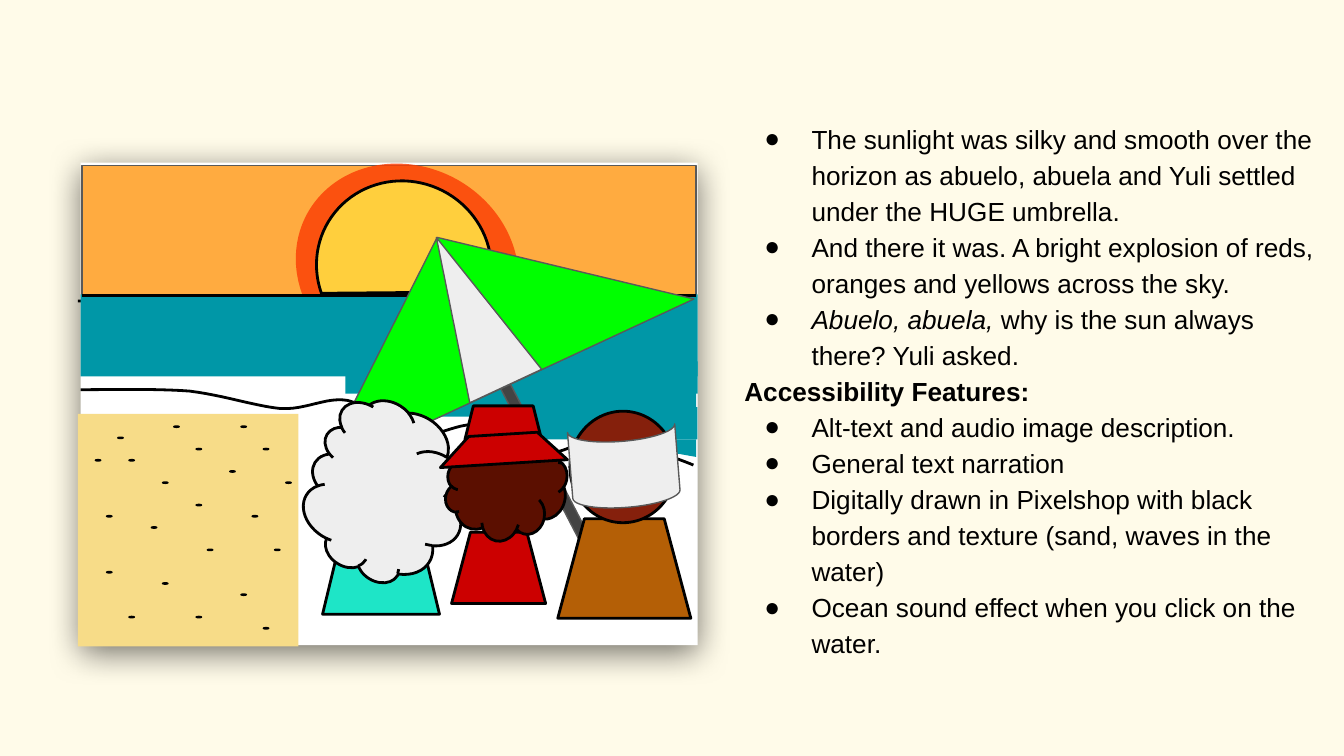
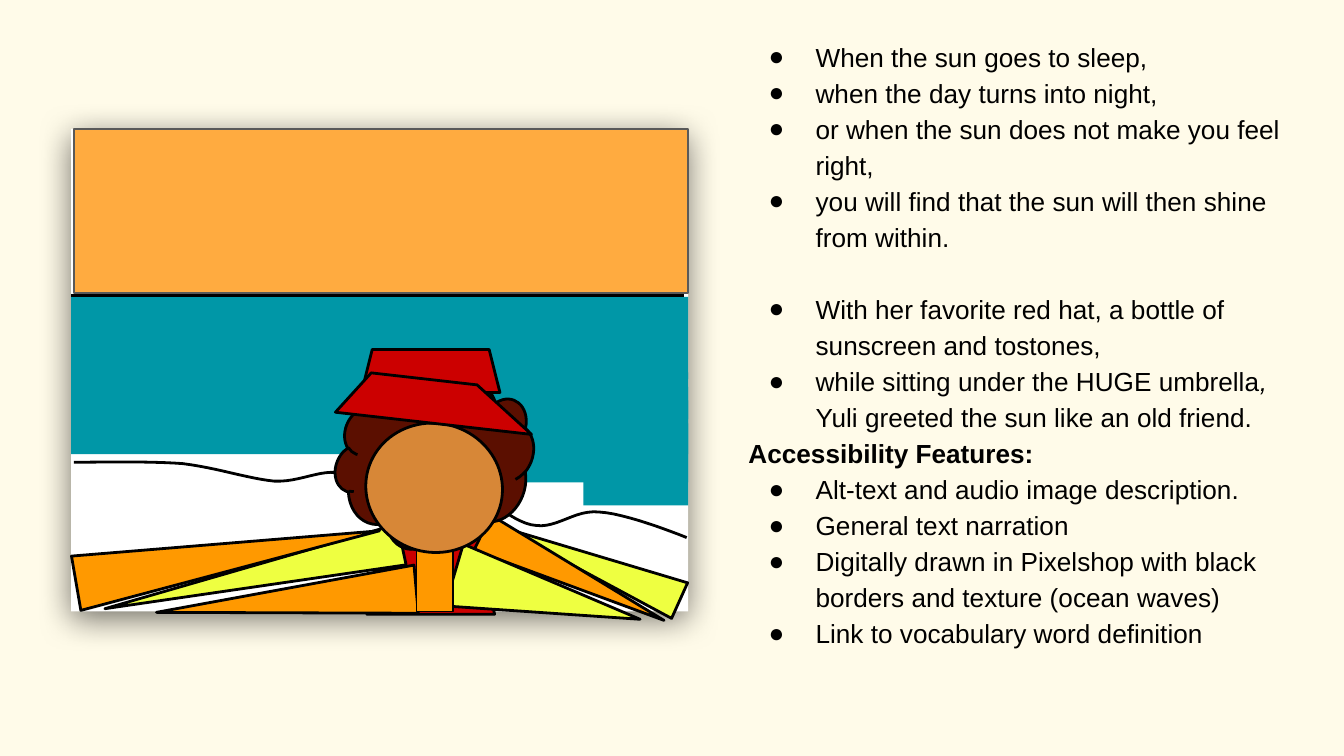
from dataclasses import dataclass

from lxml.etree import SubElement
from pptx import Presentation
from pptx.dml.color import RGBColor
from pptx.enum.shapes import MSO_CONNECTOR, MSO_SHAPE
from pptx.oxml.ns import qn
from pptx.util import Inches, Pt

# ---------- Shared style ----------
COLORS = {
    "paper": "FFFBE9", "white": "FFFFFF", "black": "000000", "gray": "595959",
    "sky": "FFAB40", "glow": "FB4006", "sun": "FFCF3D", "sea": "0097A7",
    "sand": "F7DC88", "pole": "434343", "red": "CC0000", "mint": "1EE5C7",
    "brown": "B45F06", "green": "00FF00", "pale": "EEEEEE", "dark skin": "85200C",
    "hair": "5B0F00", "skin": "D78737", "yellow": "EEFF41", "orange": "FF9900",
}
OPACITY = {"glow": 84}
OUTLINES = {"bold": ("black", 1.5), "fine": ("gray", 0.75), "grain": ("black", 0.75)}
FONT, FONT_SIZE, LINE_SPACING = "Arial", 14, 1.15
BLANK_LINE = 19.3

RECT = MSO_SHAPE.RECTANGLE
CARD = MSO_SHAPE.ROUNDED_RECTANGLE
CHORD = MSO_SHAPE.CHORD
TRIANGLE = MSO_SHAPE.ISOSCELES_TRIANGLE
CORNER = MSO_SHAPE.RIGHT_TRIANGLE
CLOUD = MSO_SHAPE.CLOUD
HEAD = MSO_SHAPE.FLOWCHART_CONNECTOR
BODY = MSO_SHAPE.FLOWCHART_MANUAL_OPERATION
CROWN = MSO_SHAPE.TRAPEZOID
BRIM = MSO_SHAPE.DIAGONAL_STRIPE
CAP = MSO_SHAPE.FLOWCHART_STORED_DATA
GRAIN = MSO_SHAPE.OVAL
TEXT, LINE, WAVE, SAND = "text", "line", "wave", "sand"


@dataclass
class Part:
    kind: object
    box: tuple
    fill: str = ""
    outline: str = ""
    turn: float = 0
    adjust: tuple = ()
    group: str = ""


# ---------- Text ----------
# Each paragraph: (style, [(text, run style), ...])
FEATURES = [
    ("heading", [("Accessibility Features:", "bold")]),
    ("bullet", [("Alt-text and audio image description.", "")]),
    ("bullet", [("General text narration", "")]),
]
SUNSET_TEXT = [
    ("bullet", [("The sunlight was silky and smooth over the horizon as abuelo, "
                 "abuela and Yuli settled under the HUGE umbrella.", "")]),
    ("bullet", [("And there it was. A bright explosion of reds, oranges and "
                 "yellows across the sky.", "")]),
    ("bullet", [("Abuelo, abuela,", "italic"),
                (" why is the sun always there? Yuli asked.", "")]),
    *FEATURES,
    ("bullet", [("Digitally drawn in Pixelshop with black borders and texture "
                 "(sand, waves in the water)", "")]),
    ("bullet", [("Ocean sound effect when you click on the water.", "")]),
]
GREETING_TEXT = [
    ("bullet", [("When the sun goes to sleep,", "")]),
    ("bullet", [("when the day turns into night,", "")]),
    ("bullet", [("or when the sun does not make you feel right,", "")]),
    ("bullet", [("you will find that the sun will then shine from within.", "")]),
    ("spaced bullet", [("With her favorite red hat, a bottle of sunscreen and "
                        "tostones,", "")]),
    ("bullet", [("while sitting under the HUGE umbrella", ""), (",", "italic"),
                (" Yuli greeted the sun like an old friend.", "")]),
    *FEATURES,
    ("bullet", [("Digitally drawn in Pixelshop with black borders and texture "
                 "(ocean waves)", "")]),
    ("bullet", [("Link to vocabulary word definition", "")]),
]

# ---------- Drawings, from back to front ----------
# Shore curve: start, then (control, control, end) for each bend
WAVE_START = (0, 0)
WAVE_BENDS = [
    ((0.13, 0), (0.56, -0.01), (0.81, 0.01)),
    ((1.06, 0.04), (1.29, 0.12), (1.49, 0.14)),
    ((1.68, 0.15), (1.83, 0.05), (1.99, 0.08)),
    ((2.15, 0.12), (2.27, 0.32), (2.44, 0.35)),
    ((2.6, 0.38), (2.8, 0.24), (2.96, 0.26)),
    ((3.13, 0.28), (3.28, 0.46), (3.44, 0.47)),
    ((3.6, 0.49), (3.73, 0.35), (3.91, 0.37)),
    ((4.1, 0.38), (4.46, 0.52), (4.56, 0.56)),
]
BEND_STEPS = 12

# Sand grains as (column, row) on a fine grid
GRAIN_ORIGIN, GRAIN_STEP, GRAIN_SIZE = (0.71, 3.17), 1 / 12, (0.04, 0.01)
GRAINS = [
    (2, 1), (0, 3), (3, 3), (7, 0), (9, 2), (6, 5), (13, 0), (15, 2), (17, 5),
    (12, 4), (14, 8), (16, 11), (9, 7), (10, 11), (1, 8), (5, 9), (1, 13),
    (3, 17), (6, 14), (9, 17), (13, 15), (15, 18),
]

SUNSET = [
    Part(CARD, (0.6, 1.21, 4.59, 3.59), "white", adjust=(0,)),
    Part(TEXT, (5.44, 0.78, 4.46, 3.28)),
    Part(LINE, (0.58, 2.24, 5.16, 2.22), outline="bold"),
    Part(WAVE, (0.6, 2.9), outline="bold"),
    # Sky, sun and sea
    Part(RECT, (0.61, 1.23, 4.57, 1), "sky", "fine"),
    Part(CHORD, (2.27, 1.15, 1.52, 1.7), "glow", "", 119.3, (27, 154.2)),
    Part(CHORD, (2.37, 1.33, 1.27, 1.31), "sun", "bold", 117.2, (27, 155.63)),
    Part(RECT, (0.6, 2.19, 4.59, 0.61), "sea"),
    Part(RECT, (2.57, 2.69, 2.62, 0.24), "sea"),
    Part(RECT, (2.87, 2.86, 2.31, 0.24), "sea"),
    Part(RECT, (3.88, 3.03, 1.31, 0.24), "sea"),
    Part(LINE, (0.61, 2.2, 5.18, 2.2), outline="bold"),
    Part(CORNER, (4.45, 3.27, 0.73, 0.13), "sea", "", 180),
    # Umbrella and family
    Part(RECT, (4.1, 2.6, 0.08, 2.01), "pole", "fine", 332.6),
    Part(BODY, (3.36, 3.96, 0.7, 0.53), "red", "bold", 180),
    Part(BODY, (2.4, 3.85, 0.87, 0.72), "mint", "bold", 180),
    Part(BODY, (4.15, 3.86, 0.99, 0.74), "brown", "bold", 180),
    Part(TRIANGLE, (1.97, 1.71, 3.08, 1.22), "green", "fine", 335.1),
    Part(CLOUD, (2.24, 3.06, 1.27, 1.22), "pale", "bold", 301.8),
    Part(TRIANGLE, (3.21, 1.71, 0.59, 1.22), "pale", "fine", 335),
    Part(HEAD, (4.24, 3.06, 0.79, 0.83), "dark skin", "bold"),
    Part(CLOUD, (3.32, 3.25, 0.89, 0.78), "hair", "bold", 12.8),
    Part(CROWN, (3.46, 3.02, 0.57, 0.25), "red", "bold", 0, (0.25,), "hat"),
    Part(BRIM, (3.42, 3.11, 0.66, 0.68), "red", "bold", 42.3, (0.54,), "hat"),
    # Beach
    Part(RECT, (0.58, 3.08, 1.64, 1.73), "sand"),
    Part(SAND, GRAIN_ORIGIN, "black", "grain"),
    Part(CAP, (4.35, 3.08, 0.59, 0.8), "pale", "fine", 265.4),
]
GREETING = [
    Part(CARD, (0.53, 0.96, 4.59, 3.59), "white", adjust=(0,)),
    Part(BODY, (2.73, 3.71, 0.95, 0.86), "red", "bold", 180),
    Part(TEXT, (5.47, 0.17, 4.29, 3.28)),
    # Sun rays
    Part(TRIANGLE, (1.73, 3.16, 0.31, 2.26), "yellow", "bold", 257.8),
    Part(TRIANGLE, (1.49, 3, 0.41, 2.29), "orange", "bold", 80.2),
    Part(TRIANGLE, (1.95, 3.5, 0.36, 1.94), "orange", "bold", 264.9),
    Part(TRIANGLE, (4.26, 3.46, 0.29, 1.43), "yellow", "bold", 294.3, (0.34,)),
    Part(TRIANGLE, (4.12, 3.54, 0.29, 1.5), "orange", "bold", 115.8),
    Part(TRIANGLE, (3.82, 3.77, 0.48, 1.42), "yellow", "bold", 106.5, (0.34,)),
    Part(RECT, (3.1, 4.07, 0.27, 0.48), "orange", "grain"),
    # Sea
    Part(RECT, (0.53, 2.21, 4.59, 0.61), "sea"),
    Part(RECT, (2.81, 2.88, 2.31, 0.24), "sea"),
    Part(CORNER, (4.38, 3.29, 0.73, 0.13), "sea", "", 180),
    Part(RECT, (0.53, 2.77, 4.59, 0.61), "sea"),
    Part(WAVE, (0.55, 3.44), outline="bold"),
    Part(RECT, (3.91, 2.98, 1.21, 0.61), "sea"),
    # Yuli
    Part(CLOUD, (2.52, 2.79, 1.41, 1.32), "hair", "bold", 21, (), "head"),
    Part(HEAD, (2.72, 3.15, 1.02, 0.96), "skin", "bold", 12.8, (), "head"),
    Part(CROWN, (2.69, 2.6, 1.03, 0.32), "red", "bold", 0, (0.25,), "hat"),
    Part(BRIM, (2.63, 2.72, 1.19, 0.86), "red", "bold", 42.3, (0.54,), "hat"),
    # Sky
    Part(LINE, (0.53, 2.2, 5.09, 2.2), outline="bold"),
    Part(RECT, (0.55, 0.96, 4.57, 1.22), "sky", "fine"),
    Part(RECT, (4.34, 3.15, 0.78, 0.61), "sea"),
]
SLIDES = [(SUNSET, SUNSET_TEXT), (GREETING, GREETING_TEXT)]


# ---------- Drawing helpers ----------
def rgb(name):
    return RGBColor.from_string(COLORS[name])


def add_xml(parent, tag, **attributes):
    return SubElement(parent, qn(tag), {key: str(value) for key, value in attributes.items()})


def set_outline(shape, outline):
    if not outline:
        shape.line.fill.background()
        return
    color, width = OUTLINES[outline]
    shape.line.color.rgb = rgb(color)
    shape.line.width = Pt(width)
    add_xml(shape._element.spPr.find(qn("a:ln")), "a:round")


def add_card_shadow(shape):
    effects = shape._element.spPr.find(qn("a:effectLst"))
    shadow = add_xml(effects, "a:outerShdw", blurRad=Pt(18), dist=Pt(4),
                     dir=90 * 60000, algn="ctr", rotWithShape=0)
    color = add_xml(shadow, "a:srgbClr", val=COLORS["black"])
    add_xml(color, "a:alpha", val=55000)


def add_preset(shapes, part):
    shape = shapes.add_shape(part.kind, *map(Inches, part.box))
    shape.shadow.inherit = False
    shape.rotation = part.turn
    for index, value in enumerate(part.adjust):
        shape.adjustments[index] = value
    shape.fill.solid()
    shape.fill.fore_color.rgb = rgb(part.fill)
    if part.fill in OPACITY:
        color = shape._element.spPr.find(".//" + qn("a:srgbClr"))
        add_xml(color, "a:alpha", val=OPACITY[part.fill] * 1000)
    set_outline(shape, part.outline)
    if part.kind == CARD:
        add_card_shadow(shape)


def add_line(shapes, part):
    line = shapes.add_connector(MSO_CONNECTOR.STRAIGHT, *map(Inches, part.box))
    set_outline(line, part.outline)
    add_xml(line._element.spPr, "a:effectLst")


def bend_points():
    start = WAVE_START
    for first, second, end in WAVE_BENDS:
        for step in range(1, BEND_STEPS + 1):
            t = step / BEND_STEPS
            s = 1 - t
            yield tuple(s**3 * a + 3 * s * s * t * b + 3 * s * t * t * c + t**3 * d
                        for a, b, c, d in zip(start, first, second, end))
        start = end


def add_wave(shapes, part):
    left, top = part.box
    builder = shapes.build_freeform(Inches(left), Inches(top))
    builder.add_line_segments([(Inches(left + x), Inches(top + y)) for x, y in bend_points()],
                              close=False)
    wave = builder.convert_to_shape()
    wave.shadow.inherit = False
    wave.fill.background()
    set_outline(wave, part.outline)


def add_sand(shapes, part):
    left, top = part.box
    for column, row in GRAINS:
        box = (left + column * GRAIN_STEP, top + row * GRAIN_STEP, *GRAIN_SIZE)
        add_preset(shapes, Part(GRAIN, box, part.fill, part.outline))


def add_text(shapes, part, paragraphs):
    text_frame = shapes.add_textbox(*map(Inches, part.box)).text_frame
    text_frame.word_wrap = True
    text_frame.margin_left = text_frame.margin_right = Inches(0.1)
    text_frame.margin_top = text_frame.margin_bottom = Inches(0.1)
    for index, (style, runs) in enumerate(paragraphs):
        paragraph = text_frame.add_paragraph() if index else text_frame.paragraphs[0]
        paragraph.line_spacing = LINE_SPACING
        if style == "spaced bullet":
            paragraph.space_before = Pt(BLANK_LINE)
        if style != "heading":
            properties = paragraph._p.get_or_add_pPr()
            properties.set("marL", str(Inches(0.5)))
            properties.set("indent", str(Inches(-0.35)))
            add_xml(add_xml(properties, "a:buClr"), "a:srgbClr", val=COLORS["black"])
            add_xml(properties, "a:buSzPts", val=FONT_SIZE * 100)
            add_xml(properties, "a:buFont", typeface=FONT)
            add_xml(properties, "a:buChar", char="●")
        for text, emphasis in runs:
            run = paragraph.add_run()
            run.text = text
            run.font.name, run.font.size = FONT, Pt(FONT_SIZE)
            run.font.color.rgb = rgb("black")
            run.font.bold = emphasis == "bold"
            run.font.italic = emphasis == "italic"


def draw(slide, parts, paragraphs):
    special = {LINE: add_line, WAVE: add_wave, SAND: add_sand}
    groups = {}
    for part in parts:
        shapes = slide.shapes
        if part.group:
            if part.group not in groups:
                groups[part.group] = slide.shapes.add_group_shape()
            shapes = groups[part.group].shapes
        if part.kind == TEXT:
            add_text(shapes, part, paragraphs)
        else:
            special.get(part.kind, add_preset)(shapes, part)


def main():
    presentation = Presentation()
    presentation.slide_width = Inches(10)
    presentation.slide_height = presentation.slide_width * 9 // 16
    background = presentation.slide_master.background.fill
    background.solid()
    background.fore_color.rgb = rgb("paper")
    for parts, paragraphs in SLIDES:
        slide = presentation.slides.add_slide(presentation.slide_layouts[6])
        draw(slide, parts, paragraphs)
    presentation.save("out.pptx")


if __name__ == "__main__":
    main()
